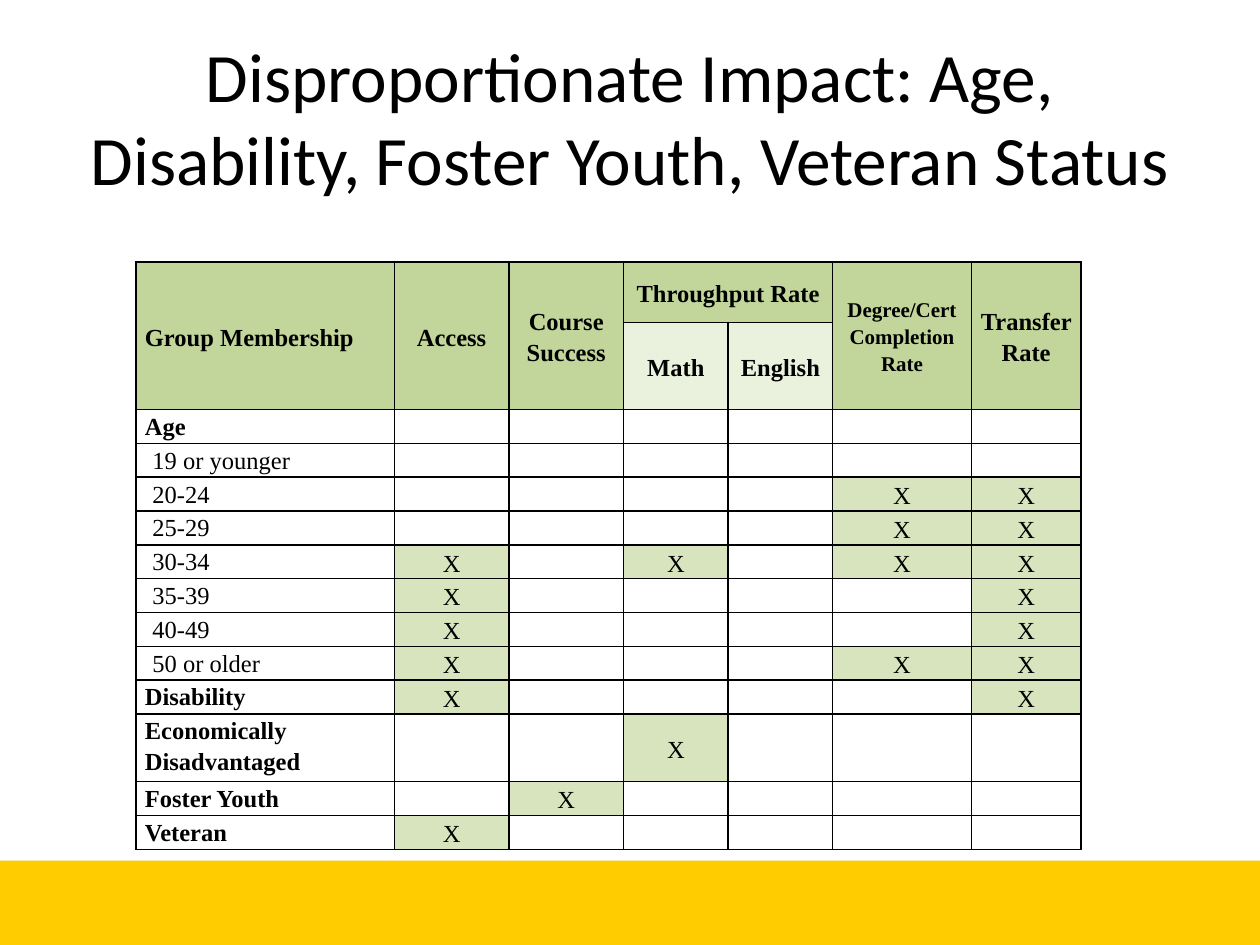
from lxml.etree import SubElement
from pptx import Presentation
from pptx.dml.color import RGBColor
from pptx.enum.shapes import MSO_SHAPE
from pptx.enum.text import MSO_ANCHOR, PP_ALIGN
from pptx.oxml.ns import qn
from pptx.util import Inches, Pt

BLACK = RGBColor(0x00, 0x00, 0x00)
GOLD = RGBColor(0xFF, 0xCC, 0x00)
HEADER_GREEN = RGBColor(0xC2, 0xD6, 0x9B)
SUBHEADER_GREEN = RGBColor(0xEA, 0xF1, 0xDD)
IMPACT_GREEN = RGBColor(0xD7, 0xE4, 0xBD)

COLUMN_WIDTHS = [2.05, 0.91, 0.91, 0.83, 0.83, 1.1, 0.87]
HEADER_HEIGHTS = [0.48, 0.64]
LINE_HEIGHT = 0.24
HEADERS = ["Group Membership", "Access", "Course Success", "Throughput Rate",
           None, "Degree/Cert Completion Rate", "Transfer Rate"]
SUBHEADERS = {3: "Math", 4: "English"}
ACCESS, COURSE, MATH, DEGREE, TRANSFER = 1, 2, 3, 5, 6
GROUPS = [
    ("Age", True, []),
    ("19 or younger", False, []),
    ("20-24", False, [DEGREE, TRANSFER]),
    ("25-29", False, [DEGREE, TRANSFER]),
    ("30-34", False, [ACCESS, MATH, DEGREE, TRANSFER]),
    ("35-39", False, [ACCESS, TRANSFER]),
    ("40-49", False, [ACCESS, TRANSFER]),
    ("50 or older", False, [ACCESS, DEGREE, TRANSFER]),
    ("Disability", True, [ACCESS, TRANSFER]),
    ("Economically Disadvantaged", True, [MATH]),
    ("Foster Youth", True, [COURSE]),
    ("Veteran", True, [ACCESS]),
]


def add_footer_band(slide, left, top, width, height):
    band = slide.shapes.add_shape(MSO_SHAPE.ROUNDED_RECTANGLE, Inches(left),
                                  Inches(top), Inches(width), Inches(height))
    band.adjustments[0] = 0.1
    band.shadow.inherit = False
    band.fill.solid()
    band.fill.fore_color.rgb = GOLD
    band.line.fill.background()


def add_title(slide, left, top, width, height):
    title = slide.shapes.add_textbox(Inches(left), Inches(top),
                                     Inches(width), Inches(height))
    frame = title.text_frame
    frame.word_wrap = True
    frame.vertical_anchor = MSO_ANCHOR.MIDDLE
    frame.text = "Disproportionate Impact: Age, Disability, Foster Youth, Veteran Status"
    heading = frame.paragraphs[0]
    heading.alignment = PP_ALIGN.CENTER
    font = heading.runs[0].font
    font.name, font.size, font.color.rgb = "Calibri", Pt(39.6), BLACK


def prepare_cell(cell):
    cell.margin_left = cell.margin_right = Inches(0.07)
    cell.margin_top = cell.margin_bottom = 0
    properties = cell._tc.get_or_add_tcPr()
    for side in ("a:lnL", "a:lnR", "a:lnT", "a:lnB"):
        border = SubElement(properties, qn(side), w=str(Pt(1)))
        color = SubElement(border, qn("a:solidFill"))
        SubElement(color, qn("a:srgbClr"), val=str(BLACK))
    cell.fill.background()
    SubElement(cell.text_frame.paragraphs[0]._p, qn("a:endParaRPr"), sz="1400")


def write_cell(cell, text, bold=False, size=14, fill=None, centered=True, indent=0):
    cell.text_frame.text = text
    paragraph = cell.text_frame.paragraphs[0]
    paragraph.line_spacing = 1.15
    if centered:
        paragraph.alignment = PP_ALIGN.CENTER
    if indent:
        paragraph._p.get_or_add_pPr().set("marL", str(Inches(indent)))
    font = paragraph.runs[0].font
    font.name, font.size, font.bold = "Times New Roman", Pt(size), bold
    font.color.rgb = BLACK
    if fill is not None:
        cell.vertical_anchor = MSO_ANCHOR.MIDDLE
        cell.fill.solid()
        cell.fill.fore_color.rgb = fill


def add_impact_table(slide, left, top):
    heights = HEADER_HEIGHTS + [
        LINE_HEIGHT * (2 if group == "Economically Disadvantaged" else 1)
        for group, _, _ in GROUPS]
    table = slide.shapes.add_table(
        len(heights), len(COLUMN_WIDTHS), Inches(left), Inches(top),
        Inches(sum(COLUMN_WIDTHS)), Inches(sum(heights))).table
    table.first_row = table.horz_banding = False
    for column, width in zip(table.columns, COLUMN_WIDTHS):
        column.width = Inches(width)
    for row, height in zip(table.rows, heights):
        row.height = Inches(height)
    for cell in table.iter_cells():
        prepare_cell(cell)

    table.cell(0, 3).merge(table.cell(0, 4))
    for index, header in enumerate(HEADERS):
        if index in SUBHEADERS:
            write_cell(table.cell(1, index), SUBHEADERS[index], True,
                       fill=SUBHEADER_GREEN)
        else:
            table.cell(0, index).merge(table.cell(1, index))
        if header:
            write_cell(table.cell(0, index), header, True,
                       12 if index == DEGREE else 14, HEADER_GREEN, index > 0)

    for row, (group, bold, impacts) in enumerate(GROUPS, len(HEADER_HEIGHTS)):
        write_cell(table.cell(row, 0), group, bold, centered=False,
                   indent=0 if bold else 0.06)
        for measure in impacts:
            write_cell(table.cell(row, measure), "X", fill=IMPACT_GREEN)


def main():
    presentation = Presentation()
    presentation.slide_width, presentation.slide_height = Inches(10), Inches(7.5)
    slide = presentation.slides.add_slide(presentation.slide_layouts[6])
    add_footer_band(slide, -0.08, 6.83, 10.25, 0.67)
    add_title(slide, 0.5, 0.3, 9, 1.25)
    add_impact_table(slide, 1.08, 2.08)
    presentation.save("out.pptx")


if __name__ == "__main__":
    main()
